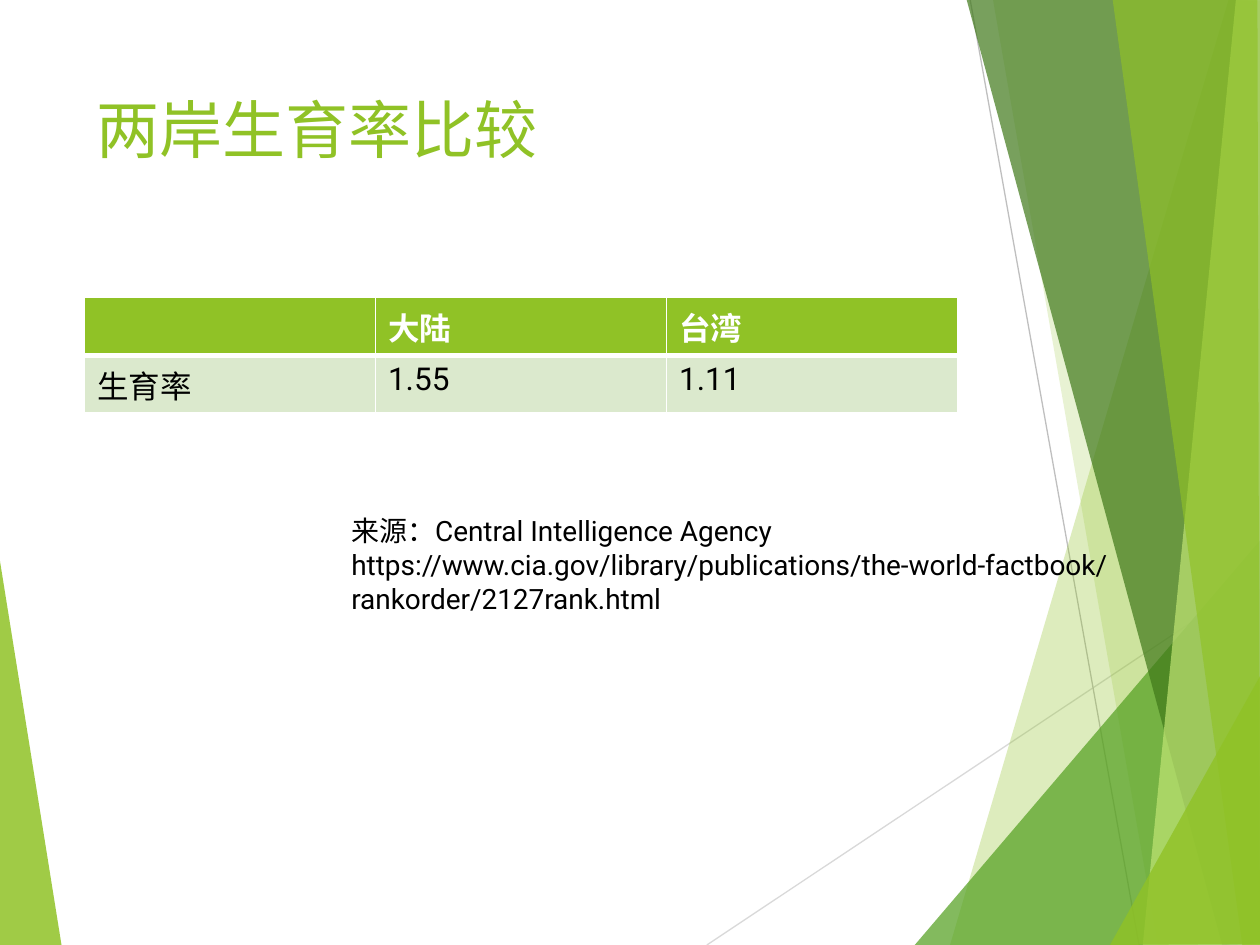
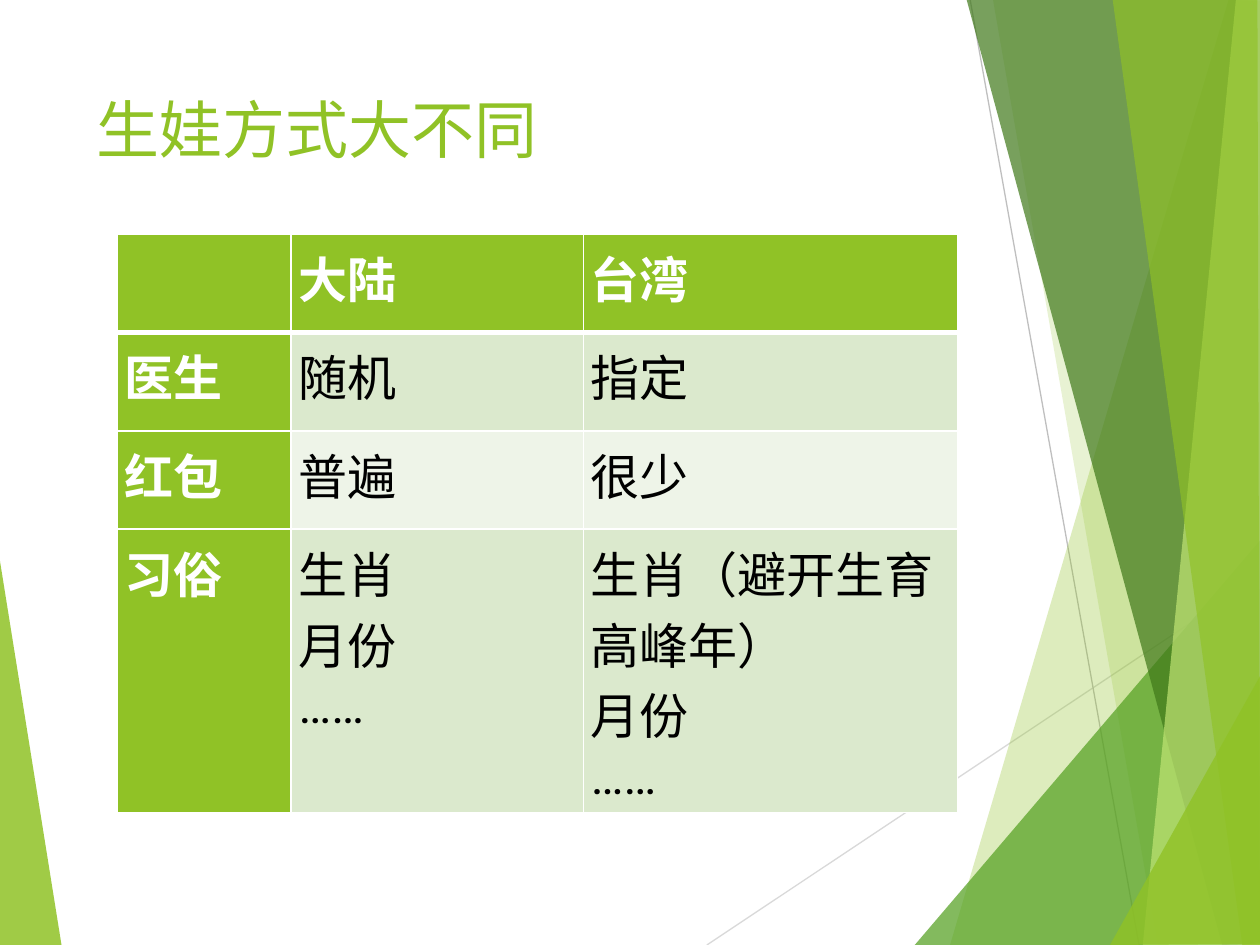
import lxml.etree
import pptx
import pptx.dml.color
import pptx.enum.shapes
import pptx.enum.text
import pptx.oxml.ns
import pptx.util

Inches = pptx.util.Inches
qn = pptx.oxml.ns.qn

FONT = "Roboto"
GREEN, WHITE, BLACK = "90C226", "FFFFFF", "000000"
BAND_COLORS = ["DBE9CD", "EEF4E8"]

LEFT_FACET = (GREEN, 85, [(-0.01, 4.39), (0.49, 7.51), (-0.01, 7.5)])
RIGHT_FACETS = [
    (GREEN, 30, [(9.75, 0), (7.54, 7.5), (10.02, 7.51), (10.01, 0.01)]),
    (GREEN, 20, [(7.88, -0.01), (9.19, 7.5), (10.01, 7.5), (10.01, -0.01)]),
    ("54A021", 72, [(7.26, 7.5), (10, 4.29), (10.01, 7.5)]),
    ("3F7819", 70, [(7.67, -0.01), (9.7, 7.5), (10.01, 7.49), (10.01, -0.01)]),
    ("C0E474", 70, [(9.81, -0.01), (9.07, 7.5), (10.01, 7.5), (10, -0.01)]),
    (GREEN, 65, [(8.83, -0.01), (9.86, 7.5), (10, 7.5), (9.98, -0.01)]),
    (GREEN, 80, [(8.81, 7.5), (10.01, 5.35), (10.01, 7.49)]),
]
THIN_LINES = [("D9D9D9", (5.61, 7.5), (10.01, 4.57)),
              ("BFBFBF", (7.7, 0), (9.04, 7.5))]


def rgb(color):
    return pptx.dml.color.RGBColor.from_string(color)


class Deck:
    """Holds the shared style and the slide being filled."""

    def __init__(self):
        self.presentation = pptx.Presentation()
        self.presentation.slide_width = Inches(10)
        self.presentation.slide_height = Inches(7.5)
        self.slide = None

    def add_slide(self, title):
        self.slide = self.presentation.slides.add_slide(
            self.presentation.slide_layouts[6])
        self.slide.background.fill.solid()
        self.slide.background.fill.fore_color.rgb = rgb(WHITE)
        self.add_facet(*LEFT_FACET)
        for line in THIN_LINES:
            self.add_line(*line)
        for facet in RIGHT_FACETS:
            self.add_facet(*facet)
        self.add_text([title], 0.67, 0.67, 6.94, 1.44, 36, GREEN)

    def add_facet(self, color, opacity, points):
        """Draw a borderless polygon; opacity is in percent."""
        corners = [(Inches(x), Inches(y)) for x, y in points]
        builder = self.slide.shapes.build_freeform(*corners[0], scale=1.0)
        builder.add_line_segments(corners[1:], close=True)
        shape = builder.convert_to_shape()
        shape.shadow.inherit = False
        shape.line.fill.background()
        shape.fill.solid()
        shape.fill.fore_color.rgb = rgb(color)
        color_element = shape._element.spPr.find(qn("a:solidFill"))[0]
        lxml.etree.SubElement(color_element, qn("a:alpha"),
                              val=str(opacity * 1000))

    def add_line(self, color, start, end):
        connector = self.slide.shapes.add_connector(
            pptx.enum.shapes.MSO_CONNECTOR.STRAIGHT,
            *[Inches(value) for value in start + end])
        connector.line.color.rgb = rgb(color)
        connector.line.width = pptx.util.Pt(0.75)
        lxml.etree.SubElement(connector._element.spPr, qn("a:effectLst"))

    def add_text(self, lines, left, top, width, height, size, color):
        shape = self.slide.shapes.add_textbox(
            Inches(left), Inches(top), Inches(width), Inches(height))
        shape.text_frame.word_wrap = True
        shape.text_frame.vertical_anchor = pptx.enum.text.MSO_ANCHOR.TOP
        self.fill_text(shape.text_frame, lines, size, color)

    def fill_text(self, frame, lines, size, color, bold=False):
        for index, line in enumerate(lines):
            paragraph = frame.add_paragraph() if index else frame.paragraphs[0]
            run = paragraph.add_run()
            run.text = line
            run.font.name = FONT
            run.font.size = pptx.util.Pt(size)
            run.font.bold = bold
            run.font.color.rgb = rgb(color)

    def add_table(self, rows, left, top, widths, heights, size,
                  margin=None, header_column=False):
        """Draw a banded table; line breaks in a cell start new paragraphs."""
        table = self.slide.shapes.add_table(
            len(rows), len(widths), Inches(left), Inches(top),
            Inches(sum(widths)), Inches(sum(heights))).table
        table.first_row = table.horz_banding = False
        for column, width in zip(table.columns, widths):
            column.width = Inches(width)
        for row, height in zip(table.rows, heights):
            row.height = Inches(height)
        for i, texts in enumerate(rows):
            for j, text in enumerate(texts):
                cell = table.cell(i, j)
                is_header = i == 0 or (header_column and j == 0)
                if margin is not None:
                    cell.margin_left = cell.margin_right = Inches(margin)
                    cell.margin_top = cell.margin_bottom = Inches(margin)
                self.add_borders(cell, top=3 if i == 1 else 1,
                                 bottom=3 if i == 0 else 1)
                cell.fill.solid()
                cell.fill.fore_color.rgb = rgb(
                    GREEN if is_header else BAND_COLORS[(i - 1) % 2])
                if text:
                    self.fill_text(cell.text_frame, text.split("\n"), size,
                                   WHITE if is_header else BLACK, is_header)

    def add_borders(self, cell, top, bottom):
        properties = cell._tc.get_or_add_tcPr()
        for side, points in zip("LRTB", (1, 1, top, bottom)):
            line = lxml.etree.SubElement(properties, qn("a:ln" + side),
                                         w=str(pptx.util.Pt(points)))
            fill = lxml.etree.SubElement(line, qn("a:solidFill"))
            lxml.etree.SubElement(fill, qn("a:srgbClr"), val=WHITE)


def main():
    deck = Deck()

    deck.add_slide("两岸生育率比较")
    birth_rates = [["", "大陆", "台湾"],
                   ["生育率", "1.55", "1.11"]]
    deck.add_table(birth_rates, 0.67, 2.36, [2.31] * 3, [0.46] * 2, 18)
    source_lines = [
        "来源：Central Intelligence Agency",
        "https://www.cia.gov/library/publications/the-world-factbook/"
        "rankorder/2127rank.html"]
    deck.add_text(source_lines, 2.69, 4.03, 7.15, 0.91, 16, BLACK)

    deck.add_slide("生娃方式大不同")
    birth_customs = [["", "大陆", "台湾"],
                     ["医生", "随机", "指定"],
                     ["红包", "普遍", "很少"],
                     ["习俗", "生肖\n月份\n……",
                      "生肖（避开生育高峰年）\n月份\n……"]]
    deck.add_table(birth_customs, 0.93, 1.86, [1.38, 2.32, 2.97],
                   [0.78] * 3 + [2.25], 28, margin=0.06, header_column=True)

    deck.presentation.save("out.pptx")


if __name__ == "__main__":
    main()
